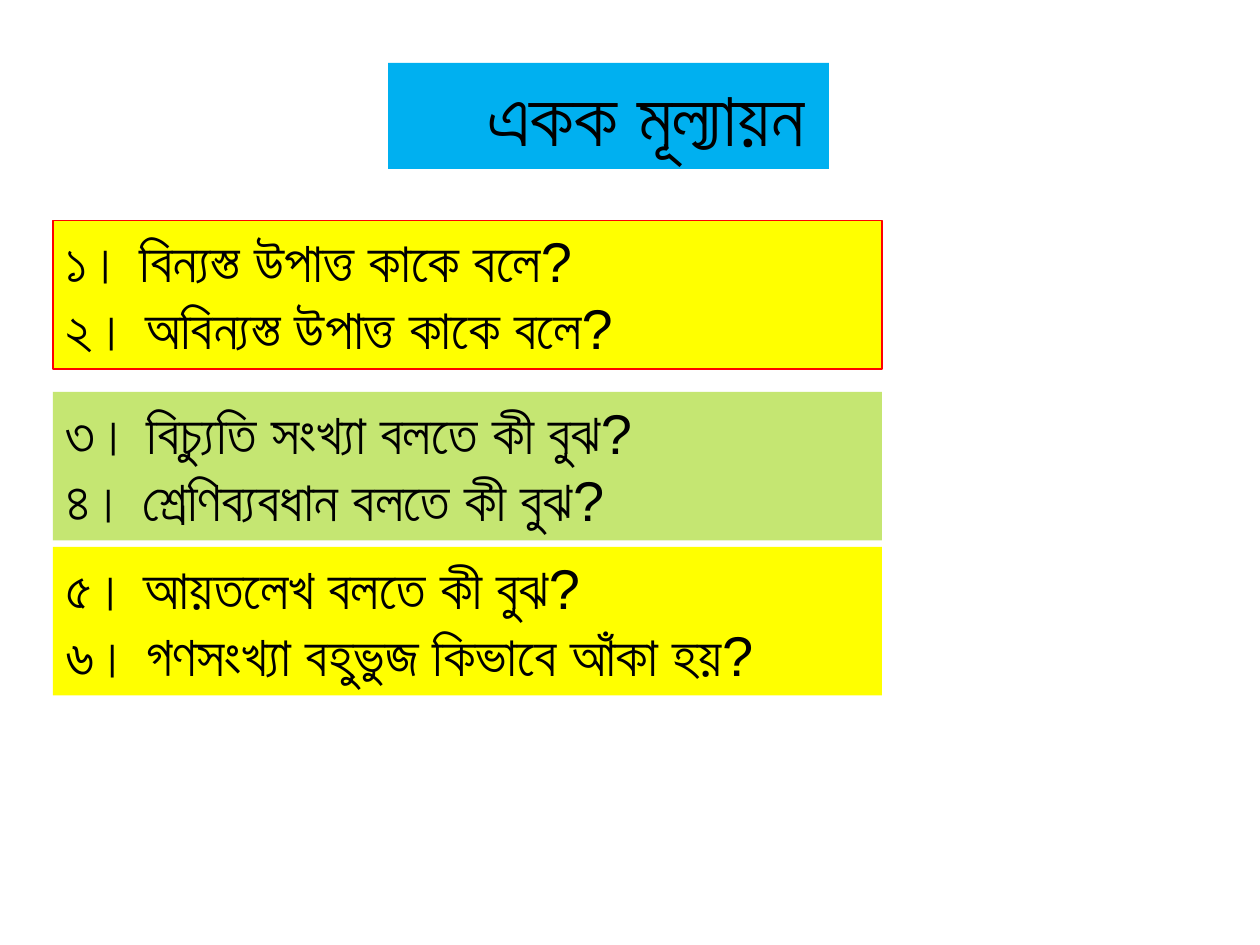
from dataclasses import dataclass

from pptx import Presentation
from pptx.dml.color import RGBColor
from pptx.enum.text import MSO_AUTO_SIZE
from pptx.util import Inches, Pt

FIT_SHAPE = MSO_AUTO_SIZE.SHAPE_TO_FIT_TEXT
FONT = "Arial"
COLORS = {
    "title": "00B0F0",
    "yellow": "FFFF00",
    "green": "C5E672",
    "border": "FF0000",
    "text": "000000",
}


@dataclass
class Panel:
    lines: list[str]
    left: float
    top: float
    width: float
    height: float
    fill: str
    size: int = 32
    margin_left: float = 0.1
    border: str | None = None


def question_panel(lines: list[str], top: float, fill: str,
                   border: str | None = None) -> Panel:
    return Panel(lines, 0.42, top, 6.58, 1.18, fill, border=border)


PANELS = [
    Panel(["একক মূল্যায়ন"], 3.08, 0.5, 3.5, 0.84, "title",
          size=44, margin_left=0.79),
    question_panel(["১। বিন্যস্ত উপাত্ত কাকে বলে?", "২। অবিন্যস্ত উপাত্ত কাকে বলে?"],
                   1.75, "yellow", border="border"),
    question_panel(["৩। বিচ্যুতি সংখ্যা বলতে কী বুঝ?", "৪। শ্রেণিব্যবধান বলতে কী বুঝ?"],
                   3.11, "green"),
    question_panel(["৫। আয়তলেখ বলতে কী বুঝ?", "৬। গণসংখ্যা বহুভুজ কিভাবে আঁকা হয়?"],
                   4.34, "yellow"),
]


def color(name: str) -> RGBColor:
    return RGBColor.from_string(COLORS[name])


def draw_panel(slide, panel: Panel) -> None:
    shape = slide.shapes.add_textbox(
        Inches(panel.left), Inches(panel.top),
        Inches(panel.width), Inches(panel.height))
    shape.fill.solid()
    shape.fill.fore_color.rgb = color(panel.fill)
    if panel.border:
        shape.line.color.rgb = color(panel.border)
        shape.line.width = Pt(0.75)

    text_frame = shape.text_frame
    text_frame.word_wrap = True
    text_frame.auto_size = FIT_SHAPE
    text_frame.margin_left = Inches(panel.margin_left)
    text_frame.text = "\n".join(panel.lines)
    for paragraph in text_frame.paragraphs:
        for run in paragraph.runs:
            run.font.name = FONT
            run.font.size = Pt(panel.size)
            run.font.color.rgb = color("text")


def main() -> None:
    presentation = Presentation()
    presentation.slide_width = Inches(10)
    presentation.slide_height = Inches(7.5)
    slide = presentation.slides.add_slide(presentation.slide_layouts[6])
    for panel in PANELS:
        draw_panel(slide, panel)
    presentation.save("out.pptx")


if __name__ == "__main__":
    main()
